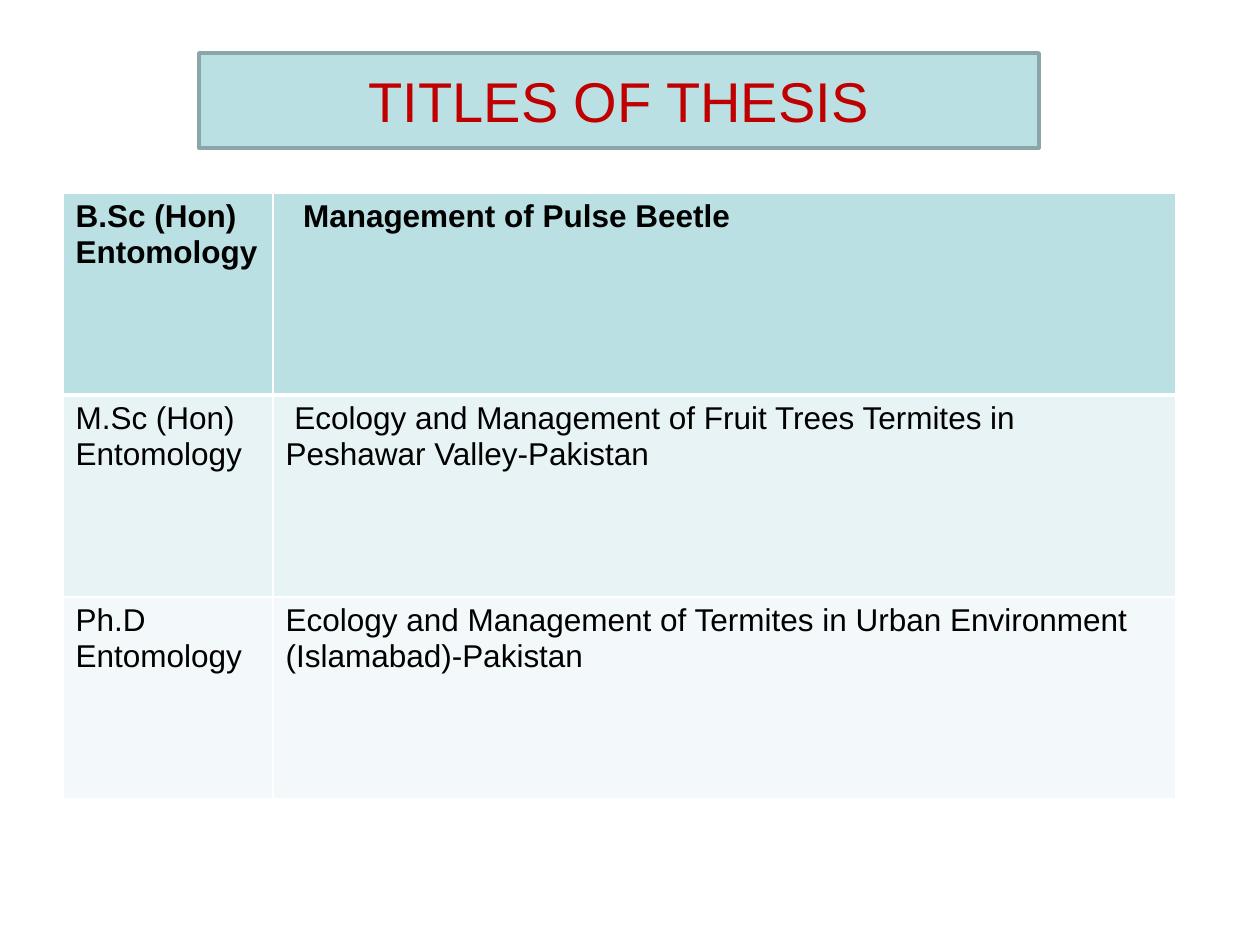
import dataclasses

import lxml.etree
import pptx
import pptx.dml.color
import pptx.enum.shapes
import pptx.enum.text
import pptx.oxml.ns
import pptx.util

EMU_PER_PX = 914400 / 126
qn = pptx.oxml.ns.qn


@dataclasses.dataclass(frozen=True)
class Theme:
    font: str = "Arial"
    title_size: int = 32
    body_size: int = 18
    title: str = "C00000"
    text: str = "000000"
    panel: str = "BBE0E3"
    outline: str = "8AA6A8"
    border: str = "FFFFFF"
    row_fills: tuple = ("BBE0E3", "E7F3F4", "F3F9FA")


THEME = Theme()

# Degree lines, thesis title, first-line indent of the title in points
THESES = [
    (["B.Sc (Hon)", "Entomology"], "Management of Pulse Beetle", 10),
    (["M.Sc (Hon)", "Entomology"],
     "Ecology and Management of Fruit Trees Termites in Peshawar Valley-Pakistan", 5),
    (["Ph.D", "Entomology"],
     "Ecology and Management of Termites in Urban Environment (Islamabad)-Pakistan", 0),
]


def px(length):
    return pptx.util.Emu(round(length * EMU_PER_PX))


def rgb(value):
    return pptx.dml.color.RGBColor.from_string(value)


def write(frame, lines, size=THEME.body_size, color=THEME.text, bold=False,
          align=pptx.enum.text.PP_ALIGN.LEFT, indent=0):
    """Fill a text frame with one paragraph per line; indent is in points."""
    for index, line in enumerate(lines):
        paragraph = frame.paragraphs[0] if index == 0 else frame.add_paragraph()
        paragraph.alignment = align
        if indent:
            properties = paragraph._p.get_or_add_pPr()
            properties.set("marL", "0")
            properties.set("indent", str(pptx.util.Pt(indent)))
        run = paragraph.add_run()
        run.text = line
        run.font.name = THEME.font
        run.font.size = pptx.util.Pt(size)
        run.font.bold = bold
        run.font.color.rgb = rgb(color)


def set_borders(cell, **widths):
    """Draw the borders of a cell, with widths in points by side: L, R, T, B."""
    properties = cell._tc.get_or_add_tcPr()
    for side, width in widths.items():
        line = lxml.etree.SubElement(properties, qn(f"a:ln{side}"), w=str(pptx.util.Pt(width)))
        fill = lxml.etree.SubElement(line, qn("a:solidFill"))
        lxml.etree.SubElement(fill, qn("a:srgbClr"), val=THEME.border)


def add_title(slide, left, top, width, height):
    banner = slide.shapes.add_shape(pptx.enum.shapes.MSO_SHAPE.RECTANGLE,
                                    px(left), px(top), px(width), px(height))
    banner.shadow.inherit = False
    banner.fill.solid()
    banner.fill.fore_color.rgb = rgb(THEME.panel)
    banner.line.color.rgb = rgb(THEME.outline)
    banner.line.width = pptx.util.Pt(2)
    banner.text_frame.vertical_anchor = pptx.enum.text.MSO_ANCHOR.MIDDLE
    write(banner.text_frame, ["TITLES OF THESIS"], size=THEME.title_size,
          color=THEME.title, align=pptx.enum.text.PP_ALIGN.CENTER)


def add_theses(slide, left, top, width, height, degree_width=210):
    table = slide.shapes.add_table(len(THESES), 2, px(left), px(top),
                                   px(width), px(height)).table
    table.columns[0].width = px(degree_width)
    table.columns[1].width = px(width - degree_width)
    for index, (degree, thesis, indent) in enumerate(THESES):
        table.rows[index].height = px(height / len(THESES))
        is_header = index == 0
        for cell in table.rows[index].cells:
            set_borders(cell, L=1, R=1, T=3 if index == 1 else 1, B=3 if is_header else 1)
            cell.fill.solid()
            cell.fill.fore_color.rgb = rgb(THEME.row_fills[index])
        write(table.cell(index, 0).text_frame, degree, bold=is_header)
        write(table.cell(index, 1).text_frame, [thesis], bold=is_header, indent=indent)


def main():
    presentation = pptx.Presentation()
    presentation.slide_width = px(1260)
    presentation.slide_height = px(945)
    slide = presentation.slides.add_slide(presentation.slide_layouts[6])
    add_title(slide, 199, 53, 840, 95)
    add_theses(slide, 63, 193, 1113, 606)
    presentation.save("out.pptx")


if __name__ == "__main__":
    main()
